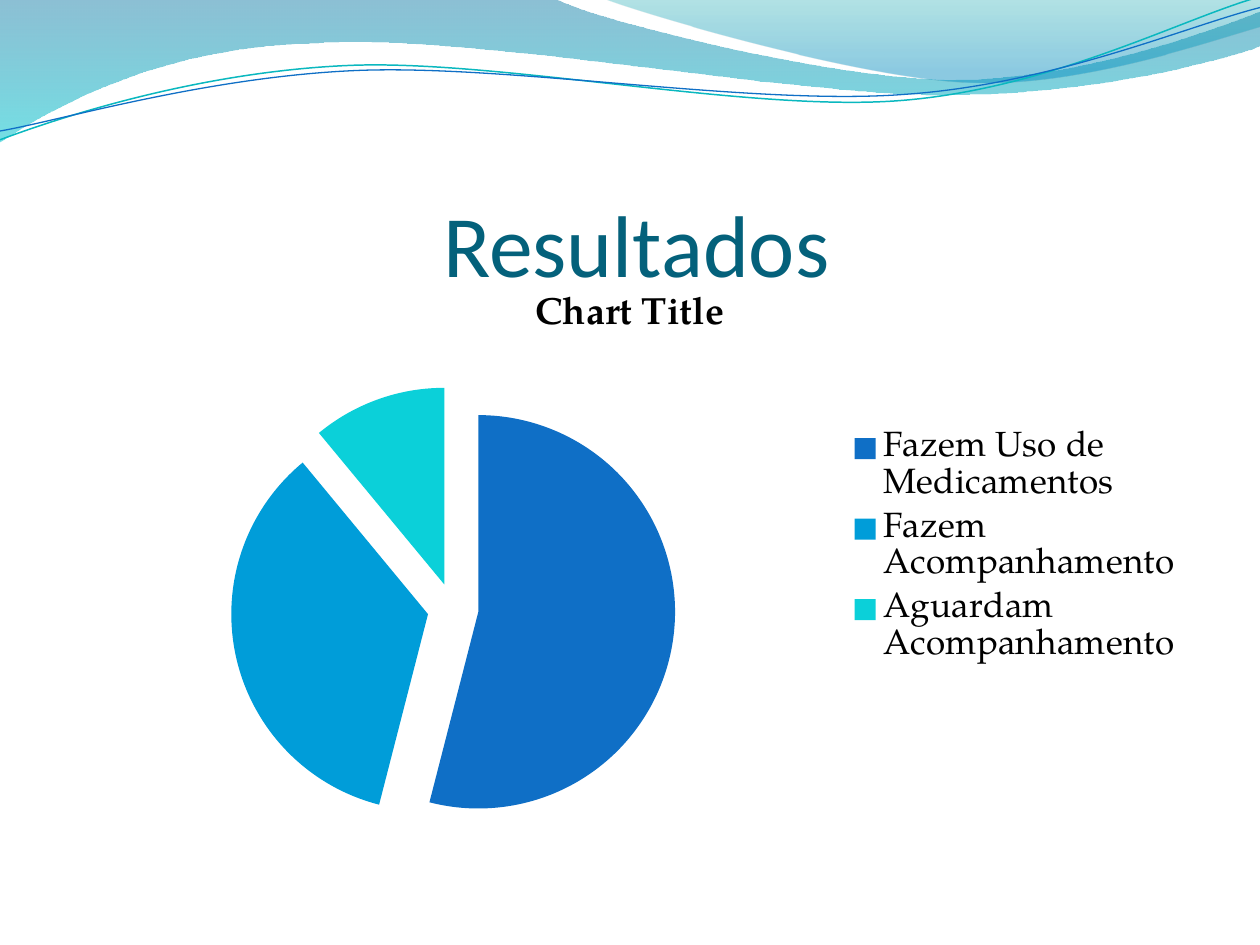
from dataclasses import dataclass

from lxml import etree
from pptx import Presentation
from pptx import util as u
from pptx.chart.data import CategoryChartData
from pptx.dml.color import RGBColor
from pptx.enum import chart as charts, text
from pptx.oxml import ns

COLORS = {
    "deep": "0074A1", "aqua": "00C6CF", "teal": "00A1A9", "sky": "008BBF",
    "teal_line": "0AB8BF", "blue": "0F6FC6", "azure": "009DD9",
    "cyan": "0BD0D9", "title": "04617B", "black": "000000",
}


@dataclass(frozen=True)
class Stop:
    position: float
    color: str
    opacity: int


@dataclass(frozen=True)
class Wave:
    start: tuple
    segments: tuple
    stops: tuple = ()
    line: str = ""
    width: float = 0


WAVES = (
    Wave(
        (0, 0),
        (
            ((4.4, -0.01),),
            ((4.76, 0.17), (6.64, 0.63), (7.58, 0.63)),
            ((8.53, 0.63), (9.58, 0.26), (10, 0.09)),
            ((10.01, 0.36),),
            ((9.83, 0.44), (8.7, 0.76), (7.46, 0.75)),
            ((6.22, 0.75), (3.82, 0.28), (2.57, 0.34)),
            ((1.29, 0.36), (0.46, 0.83), (-0.01, 1.13)),
        ),
        stops=(Stop(0, "deep", 45), Stop(1, "aqua", 55)),
    ),
    Wave(
        (4.79, -0.01),
        (
            ((5.09, 0.11), (6.82, 0.62), (7.69, 0.65)),
            ((8.56, 0.69), (9.61, 0.32), (10, 0.21)),
            ((10, 0),),
        ),
        stops=(Stop(0, "teal", 30), Stop(0.8, "sky", 45)),
    ),
    Wave(
        (0, 1.11),
        (
            ((0.48, 0.93), (1.58, 0.57), (2.77, 0.52)),
            ((3.95, 0.47), (5.93, 0.89), (7.13, 0.8)),
            ((8.33, 0.71), (9.38, 0.15), (9.98, -0.02)),
        ),
        line="teal_line", width=0.85,
    ),
    Wave(
        (0, 1.04),
        (
            ((0.47, 0.96), (1.64, 0.61), (2.83, 0.56)),
            ((4.03, 0.51), (5.97, 0.84), (7.17, 0.75)),
            ((8.36, 0.67), (9.41, 0.21), (10, 0.06)),
        ),
        line="blue", width=0.75,
    ),
)

SLICES = (
    ("Fazem Uso de Medicamentos", 54, "blue"),
    ("Fazem Acompanhamento", 35, "azure"),
    ("Aguardam Acompanhamento", 11, "cyan"),
    ("", None, None),
)
SERIES_EXPLOSION = 25
SLICE_EXPLOSION = 13


def rgb(name: str) -> RGBColor:
    return RGBColor.from_string(COLORS[name])


def apply(target, values: dict) -> None:
    for name, value in values.items():
        setattr(target, name, value)


def style_font(font, name: str, size: float, color: str, bold: bool = False) -> None:
    apply(font, {"name": name, "size": u.Pt(size), "bold": bold})
    font.color.rgb = rgb(color)


def bend_segments(shape, segments: tuple) -> None:
    lines = iter(shape._element.xpath(".//a:lnTo"))
    for segment in segments:
        group = [next(lines) for _ in segment]
        if len(group) == 3:
            curve = etree.Element(ns.qn("a:cubicBezTo"))
            group[0].addprevious(curve)
            for line in group:
                curve.append(line[0])
                line.getparent().remove(line)


def fill_gradient(shape, stops: tuple) -> None:
    shape.fill.gradient()
    shape.fill.gradient_angle = 270
    for target, stop in zip(shape.fill.gradient_stops, stops):
        target.position = stop.position
        target.color.rgb = rgb(stop.color)
    for color, stop in zip(shape._element.xpath(".//a:gs/a:srgbClr"), stops):
        alpha = etree.SubElement(color, ns.qn("a:alpha"))
        alpha.set("val", str(stop.opacity * 1000))


def draw_wave(page, wave: Wave) -> None:
    x, y = wave.start
    builder = page.shapes.build_freeform(u.Inches(x), u.Inches(y))
    points = [(u.Inches(x), u.Inches(y)) for segment in wave.segments for x, y in segment]
    builder.add_line_segments(points, close=bool(wave.stops))
    shape = builder.convert_to_shape()
    shape.shadow.inherit = False
    bend_segments(shape, wave.segments)
    if wave.stops:
        fill_gradient(shape, wave.stops)
        shape.line.fill.background()
    else:
        shape.fill.background()
        shape.line.color.rgb = rgb(wave.line)
        shape.line.width = u.Pt(wave.width)


def draw_title(page) -> None:
    box = page.shapes.add_textbox(u.Inches(0.63), u.Inches(1.09), u.Inches(9), u.Inches(1.25))
    apply(box.text_frame, {
        "word_wrap": True, "vertical_anchor": text.MSO_ANCHOR.BOTTOM,
        "margin_left": 0, "margin_top": u.Inches(0.05),
        "margin_right": 0, "margin_bottom": 0,
    })
    para = box.text_frame.paragraphs[0]
    para.alignment = text.PP_ALIGN.CENTER
    span = para.add_run()
    span.text = "Resultados "
    style_font(span.font, "Calibri", 50, "title")


def explode_before(element, percent: int) -> None:
    explosion = etree.Element(ns.qn("c:explosion"))
    explosion.set("val", str(percent))
    element.addprevious(explosion)


def style_slices(series) -> None:
    for index, (_, _, color) in enumerate(SLICES):
        fill = series.points[index].format.fill
        if color:
            fill.solid()
            fill.fore_color.rgb = rgb(color)
        else:
            fill.background()
    slices = series._element.findall(ns.qn("c:dPt"))
    explode_before(slices[0], SERIES_EXPLOSION)
    for piece in slices:
        explode_before(piece.find(ns.qn("c:spPr")), SLICE_EXPLOSION)


def draw_pie(page) -> None:
    data = CategoryChartData()
    data.categories = [label for label, _, _ in SLICES]
    data.add_series("Series 1", [value for _, value, _ in SLICES])
    chart = page.shapes.add_chart(
        charts.XL_CHART_TYPE.PIE, u.Inches(0.5), u.Inches(2.12),
        u.Inches(9), u.Inches(4.8), data,
    ).chart
    style_font(chart.font, "TeX Gyre Pagella", 18, "black")
    chart.has_title = True
    span = chart.chart_title.text_frame.paragraphs[0].add_run()
    span.text = "Chart Title"
    style_font(span.font, "TeX Gyre Pagella", 21.6, "black", bold=True)
    chart.has_legend = True
    apply(chart.legend, {
        "position": charts.XL_LEGEND_POSITION.RIGHT, "include_in_layout": False,
    })
    style_font(chart.legend.font, "TeX Gyre Pagella", 20, "black")
    plot = chart.plots[0]
    plot.vary_by_categories = True
    style_slices(plot.series[0])


def main() -> None:
    deck = Presentation()
    apply(deck, {"slide_width": u.Inches(10), "slide_height": u.Inches(7.5)})
    page = deck.slides.add_slide(deck.slide_layouts[6])
    for wave in WAVES:
        draw_wave(page, wave)
    draw_title(page)
    draw_pie(page)
    deck.save("out.pptx")


if __name__ == "__main__":
    main()
